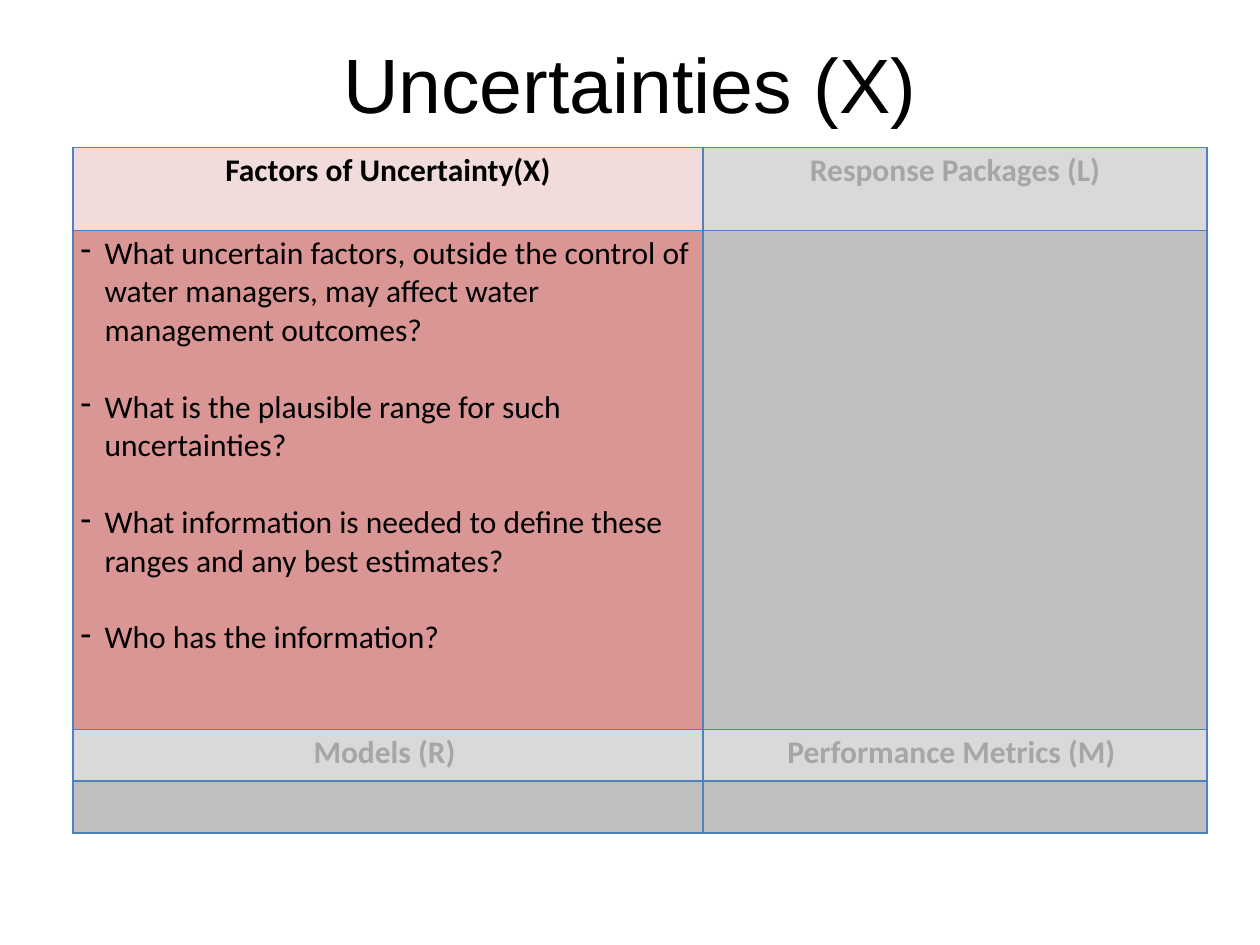
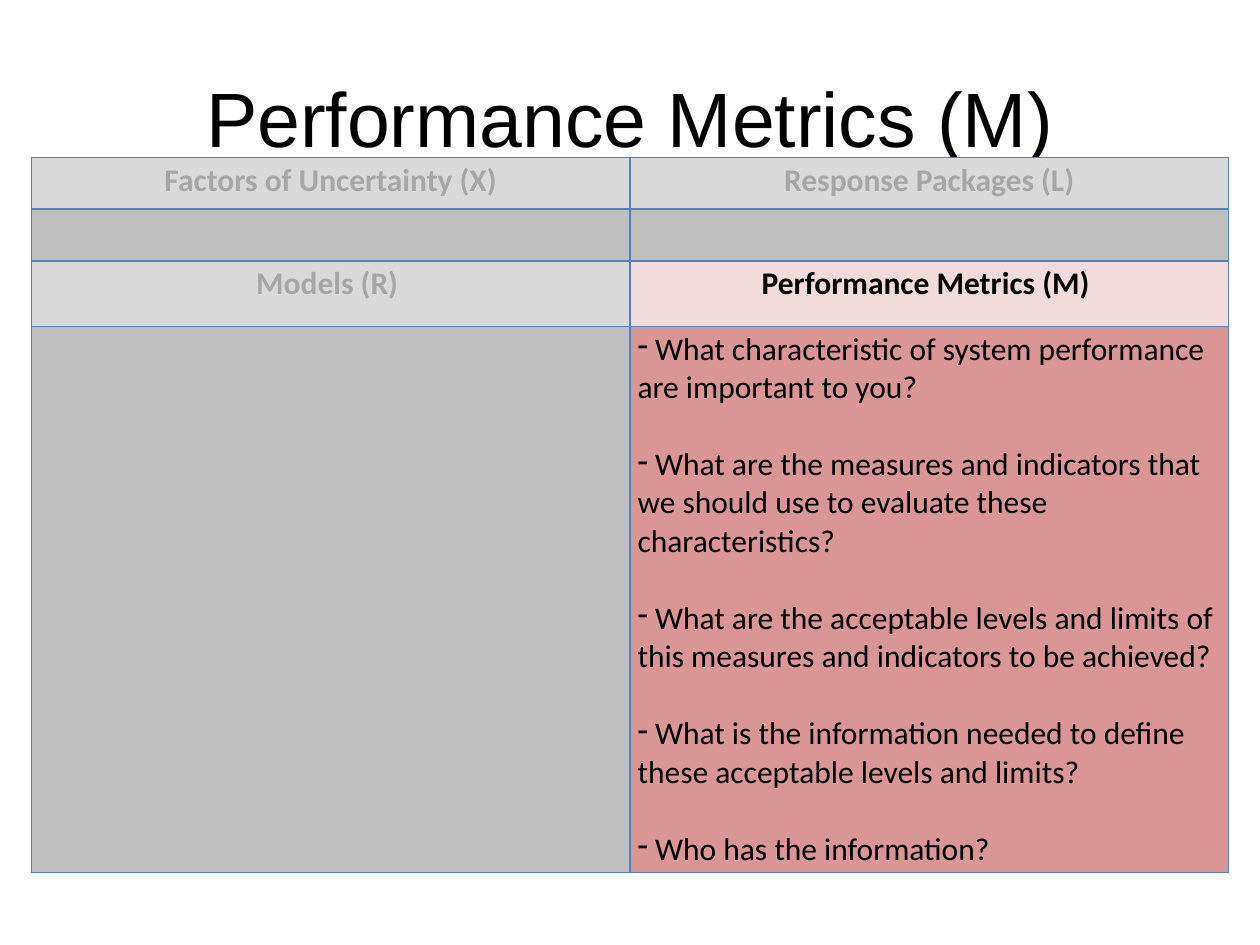
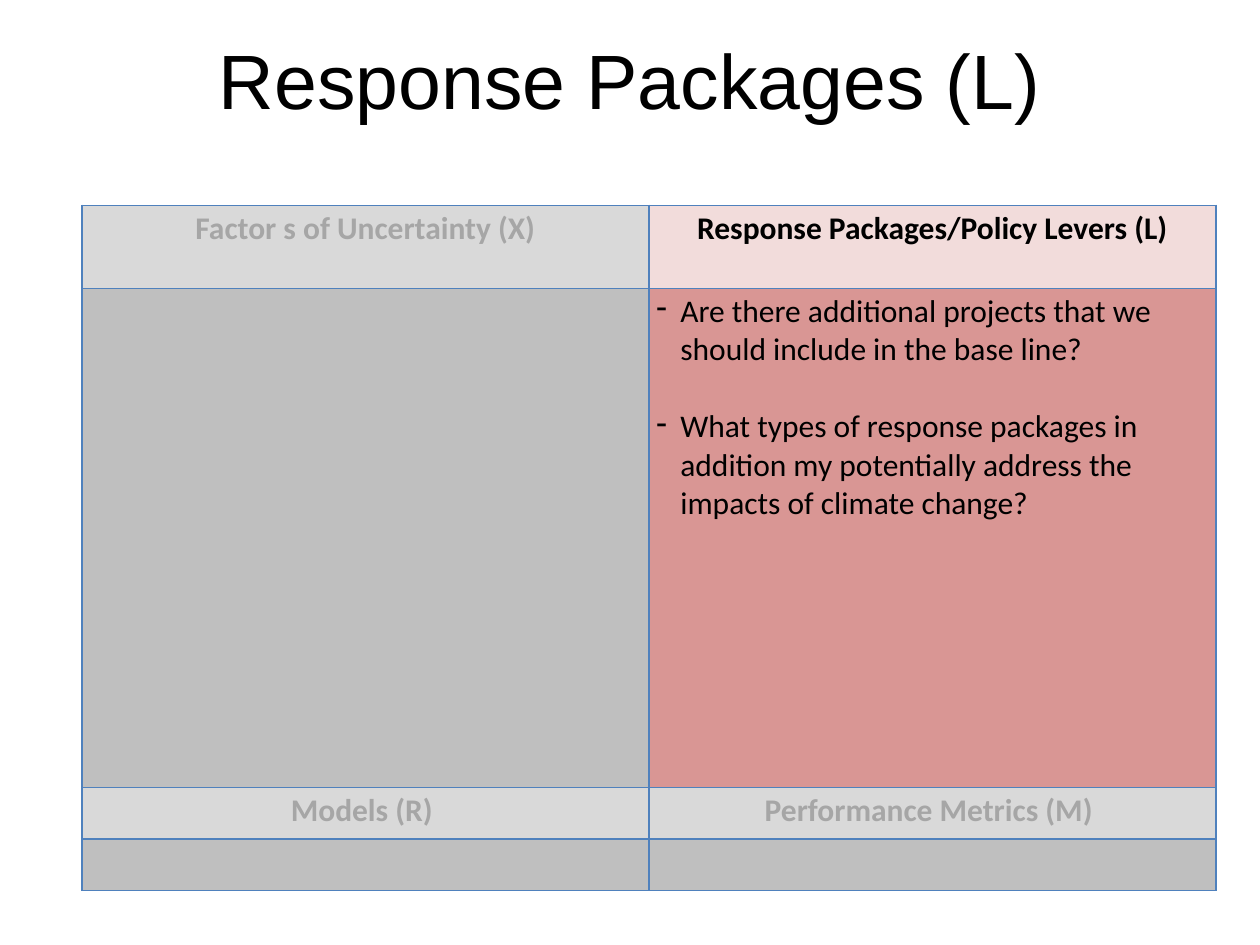
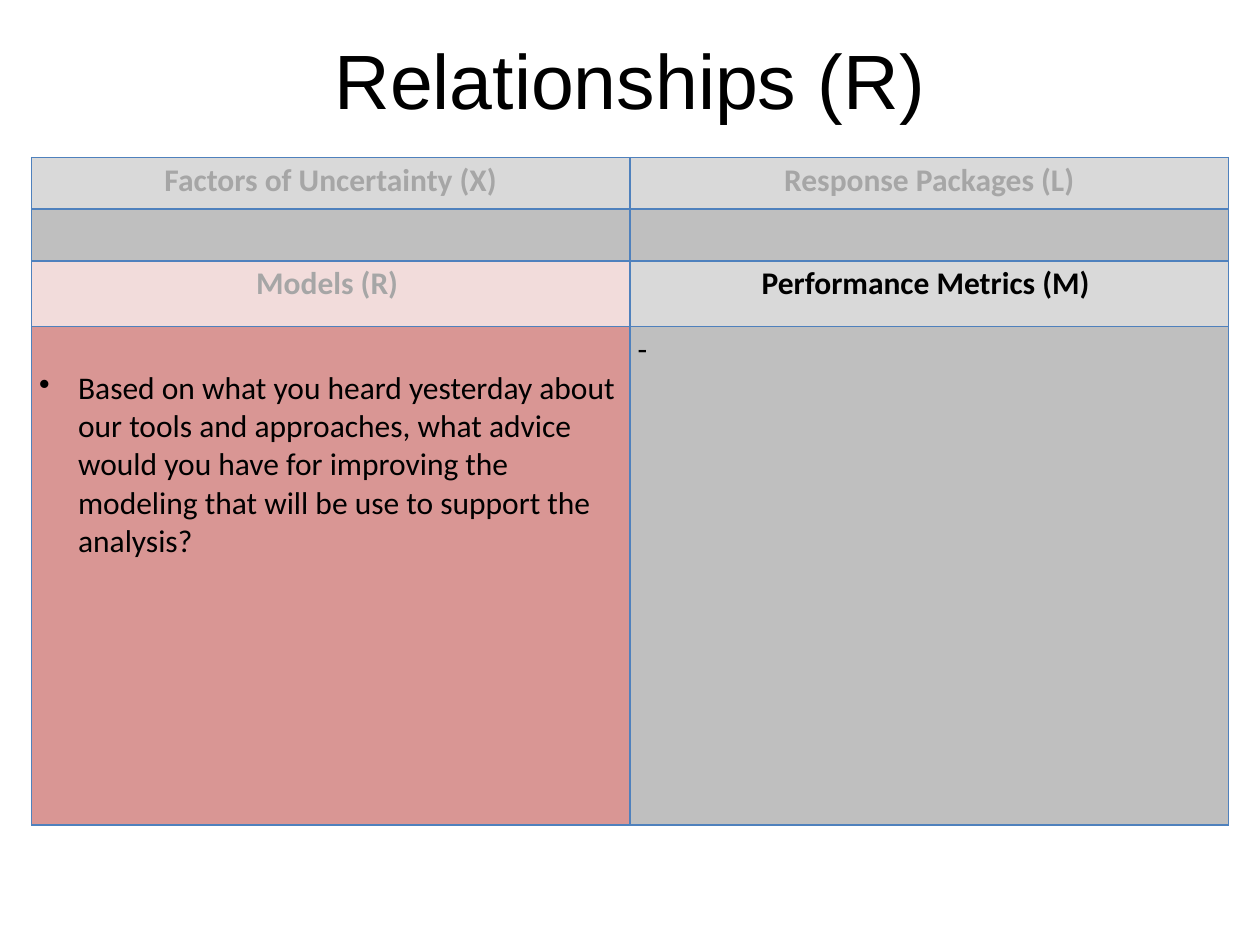
import dataclasses

import lxml.etree
import pptx
import pptx.dml.color
import pptx.enum.text
import pptx.oxml.ns
import pptx.util

PX = 9144  # EMU in one px, at 100 px to the inch
COLORS = {
    "black": "000000",
    "muted": "A6A6A6",
    "border": "4F81BD",
    "lit_heading": "F2DCDB",
    "lit_body": "D99694",
    "dim_heading": "D9D9D9",
    "dim_body": "BFBFBF",
}
LINE_GAP = 22  # points in one line of 18 point text
CENTER = pptx.enum.text.PP_ALIGN.CENTER
LEFT = pptx.enum.text.PP_ALIGN.LEFT
TITLE_FONT = {"name": "Arial", "size": pptx.util.Pt(44), "bold": False}
HEADING_FONT = {"name": "Calibri", "size": pptx.util.Pt(18), "bold": True}
BODY_FONT = {**HEADING_FONT, "bold": False}
MARGINS = {"margin_left": 6, "margin_right": 6, "margin_top": 3, "margin_bottom": 3}


@dataclasses.dataclass
class Panel:
    """One quarter of the table: a heading with the questions under it."""
    heading: str
    questions: tuple = ()
    lit: bool = False
    heading_color: str = "muted"
    bullet: str = "-"
    indent: int = 19
    top_gap: int = 0


UNCERTAINTIES = Panel("Factors of Uncertainty (X)")
RESPONSES = Panel("Response Packages (L)")
MODELS = Panel("Models (R) ")
METRICS = Panel("Performance Metrics (M) ")


def set_attributes(target, values):
    for name, value in values.items():
        setattr(target, name, value)


def add_element(parent, tag, **attributes):
    return lxml.etree.SubElement(parent, pptx.oxml.ns.qn(tag), attributes)


class Deck:
    def __init__(self):
        self.presentation = pptx.Presentation()
        self.presentation.slide_width = 1000 * PX
        self.presentation.slide_height = 750 * PX
        self.slide = None

    def add_slide(self, title, top):
        layout = self.presentation.slide_layouts[5]
        self.slide = self.presentation.slides.add_slide(layout)
        shape = self.slide.shapes.title
        set_attributes(shape, {"left": 50 * PX, "top": top * PX,
                               "width": 900 * PX, "height": 125 * PX})
        shape.text_frame.vertical_anchor = pptx.enum.text.MSO_ANCHOR.MIDDLE
        self.add_text(shape.text_frame.paragraphs[0], title, TITLE_FONT, "black", CENTER)

    def add_text(self, paragraph, text, font, color, alignment):
        paragraph.alignment = alignment
        run = paragraph.add_run()
        run.text = text
        set_attributes(run.font, font)
        run.font.color.rgb = pptx.dml.color.RGBColor.from_string(COLORS[color])

    def add_panels(self, left, top, columns, rows, panels):
        """Draw four panels, in reading order, as a table of two by two."""
        frame = self.slide.shapes.add_table(
            len(rows), len(columns), left * PX, top * PX,
            sum(columns) * PX, sum(rows) * PX)
        table = frame.table
        set_attributes(table, {"first_row": False, "horz_banding": False})
        for column, width in zip(table.columns, columns):
            column.width = width * PX
        for row, height in zip(table.rows, rows):
            row.height = height * PX
        for index, panel in enumerate(panels):
            row, column = index // 2 * 2, index % 2
            self.fill_heading(table.cell(row, column), panel)
            self.fill_body(table.cell(row + 1, column), panel)

    def style_cell(self, cell, fill):
        set_attributes(cell, {name: size * PX for name, size in MARGINS.items()})
        properties = cell._tc.get_or_add_tcPr()
        for side in ("a:lnL", "a:lnR", "a:lnT", "a:lnB"):
            line = add_element(properties, side, w=str(pptx.util.Pt(1)))
            solid = add_element(line, "a:solidFill")
            add_element(solid, "a:srgbClr", val=COLORS["border"])
        cell.fill.solid()
        cell.fill.fore_color.rgb = pptx.dml.color.RGBColor.from_string(COLORS[fill])

    def fill_heading(self, cell, panel):
        self.style_cell(cell, "lit_heading" if panel.lit else "dim_heading")
        self.add_text(cell.text_frame.paragraphs[0], panel.heading, HEADING_FONT,
                      panel.heading_color, CENTER)

    def fill_body(self, cell, panel):
        self.style_cell(cell, "lit_body" if panel.lit else "dim_body")
        cell.margin_top += panel.top_gap * PX
        for index, question in enumerate(panel.questions):
            frame = cell.text_frame
            paragraph = frame.add_paragraph() if index else frame.paragraphs[0]
            self.add_text(paragraph, question, BODY_FONT, "black", LEFT)
            if index:
                paragraph.space_before = pptx.util.Pt(LINE_GAP)
            if panel.bullet:
                self.add_bullet(paragraph, panel.bullet, panel.indent)

    def add_bullet(self, paragraph, character, indent):
        properties = paragraph._p.get_or_add_pPr()
        properties.set("marL", str(indent * PX))
        properties.set("indent", str(-indent * PX))
        add_element(properties, "a:buChar", char=character)


def main():
    deck = Deck()
    top_rows = [66, 396, 41, 41]

    deck.add_slide("Uncertainties (X)", 3)
    uncertainties = Panel("Factors of Uncertainty(X)", (
        "What uncertain factors, outside the control of water managers, "
        "may affect water management outcomes?",
        "What is the plausible range for such uncertainties?",
        "What information is needed to define these ranges and any best estimates?",
        "Who has the information?",
    ), lit=True, heading_color="black")
    deck.add_panels(58, 117, [500, 400], top_rows,
                    [uncertainties, RESPONSES, MODELS, METRICS])

    deck.add_slide("Performance Metrics (M)", 30)
    metrics = Panel(METRICS.heading, (
        " What characteristic of system performance are important to you?",
        " What are the measures and indicators that we should use to evaluate "
        "these characteristics?",
        " What are the acceptable levels and limits of this measures and "
        "indicators to be achieved?",
        " What is the information needed to define these acceptable levels and limits?",
        " Who has the information?",
    ), lit=True, heading_color="black", indent=0)
    deck.add_panels(25, 125, [475, 475], [41, 41, 52, 433],
                    [UNCERTAINTIES, RESPONSES, MODELS, metrics])

    deck.add_slide("Response Packages (L)", 0)
    responses = Panel("Response Packages/Policy Levers (L)", (
        "Are there additional projects that we should include in the base line?",
        "What types of response packages in addition my potentially address "
        "the impacts of climate change?",
    ), lit=True, heading_color="black")
    deck.add_panels(65, 163, [450, 450], top_rows,
                    [Panel("Factor s of Uncertainty (X)"), responses, MODELS, METRICS])

    deck.add_slide("Relationships (R)", 0)
    models = Panel(MODELS.heading, (
        "Based on what you heard yesterday about our tools and approaches, "
        "what advice would you have for improving the modeling that will be "
        "use to support the analysis?",
    ), lit=True, bullet="•", indent=31, top_gap=31)
    open_metrics = Panel(METRICS.heading, ("-",), heading_color="black", bullet="")
    deck.add_panels(25, 125, [475, 475], [41, 41, 52, 396],
                    [UNCERTAINTIES, RESPONSES, models, open_metrics])

    deck.presentation.save("out.pptx")


if __name__ == "__main__":
    main()
